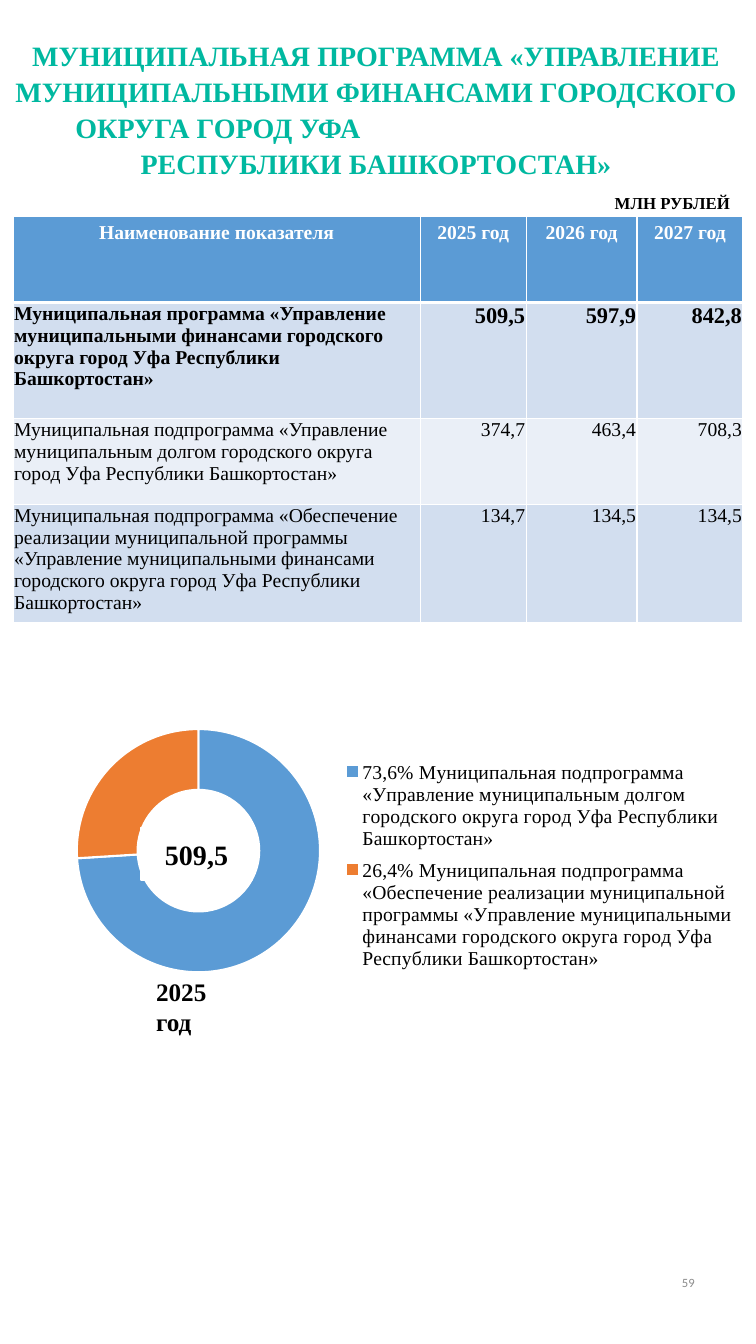
"""Build the slide on the city finance management programme."""
from dataclasses import dataclass

from lxml import etree
from pptx import Presentation
from pptx import util as u
from pptx.chart import data as chart_data
from pptx.dml import color
from pptx.enum import chart as chart_kinds, shapes, text
from pptx.oxml import ns, parse_xml

PX = 9144
ALIGN = text.PP_ALIGN


@dataclass(frozen=True)
class Theme:
    serif: str = "Times New Roman"
    sans: str = "Calibri"
    title: str = "00B8A0"
    ink: str = "000000"
    paper: str = "FFFFFF"
    muted: str = "8C8C8C"
    blue: str = "5B9BD5"
    orange: str = "ED7D31"
    band_dark: str = "D2DEEF"
    band_light: str = "EAEFF7"
    title_size: int = 20
    year_size: int = 18
    total_size: int = 16
    body_size: int = 14
    unit_size: int = 12
    chart_size: int = 10
    page_size: int = 9


THEME = Theme()
YEARS = ["2025 год", "2026 год", "2027 год"]
DEBT = ("Муниципальная подпрограмма «Управление муниципальным долгом "
        "городского округа город Уфа Республики Башкортостан»")
SUPPORT = ("Муниципальная подпрограмма «Обеспечение реализации муниципальной "
           "программы «Управление муниципальными финансами городского округа "
           "город Уфа Республики Башкортостан»")
ROWS = [
    ["Наименование показателя", *YEARS],
    ["Муниципальная программа «Управление муниципальными финансами городского "
     "округа город Уфа Республики Башкортостан»", "509,5", "597,9", "842,8"],
    [DEBT, "374,7", "463,4", "708,3"],
    [SUPPORT, "134,7", "134,5", "134,5"],
]
TITLE = [
    ("МУНИЦИПАЛЬНАЯ ПРОГРАММА «УПРАВЛЕНИЕ МУНИЦИПАЛЬНЫМИ ФИНАНСАМИ ГОРОДСКОГО",
     ALIGN.CENTER, 0),
    ("ОКРУГА ГОРОД УФА", ALIGN.LEFT, 67),
    ("РЕСПУБЛИКИ БАШКОРТОСТАН»", ALIGN.CENTER, 0),
]


def px(*lengths):
    """Turn px lengths into EMU."""
    return [u.Emu(length * PX) for length in lengths]


def rgb(value):
    """Return a colour object for a hex value."""
    return color.RGBColor.from_string(value)


def style_font(font, size, tint=THEME.ink, bold=False, name=THEME.serif):
    """Set face, size, colour and weight of a font."""
    font.name, font.size, font.bold = name, u.Pt(size), bold
    font.color.rgb = rgb(tint)


def add_span(para, words, align, size, **look):
    """Align a paragraph and add one styled run to it."""
    para.alignment = align
    span = para.add_run()
    span.text = words
    style_font(span.font, size, **look)


def add_box(page, place, anchor=text.MSO_ANCHOR.TOP, wrap=True):
    """Add an empty text box and return its frame."""
    frame = page.shapes.add_textbox(*px(*place)).text_frame
    frame.word_wrap, frame.vertical_anchor = wrap, anchor
    return frame


def add_label(page, place, words, size, align=ALIGN.LEFT,
              anchor=text.MSO_ANCHOR.TOP, wrap=True, **look):
    """Add a text box with one line of text."""
    frame = add_box(page, place, anchor, wrap)
    add_span(frame.paragraphs[0], words, align, size, **look)


def add_title(page):
    """Add the heading with its shifted third line."""
    frame = add_box(page, (-2, 30, 750, 154), text.MSO_ANCHOR.MIDDLE)
    for index, (words, align, indent) in enumerate(TITLE):
        para = frame.add_paragraph() if index else frame.paragraphs[0]
        para.line_spacing = 1.07
        para.space_after = u.Pt(0)
        if indent:
            para._p.get_or_add_pPr().set("marL", str(indent * PX))
        add_span(para, words, align, THEME.title_size, tint=THEME.title, bold=True)
    para.space_after = u.Pt(8)


def add_borders(cell, row):
    """Draw white cell borders, thicker under the header row."""
    thick = {(0, "B"), (1, "T")}
    for side in "LRTB":
        width = u.Pt(3 if (row, side) in thick else 1)
        cell._tc.get_or_add_tcPr().append(parse_xml(
            f'<a:ln{side} {ns.nsdecls("a")} w="{width}"><a:solidFill>'
            f'<a:srgbClr val="{THEME.paper}"/></a:solidFill></a:ln{side}>'))


def fill_cell(cell, row, column, words):
    """Write and style one table cell."""
    add_borders(cell, row)
    cell.fill.solid()
    fills = [THEME.blue, THEME.band_dark, THEME.band_light, THEME.band_dark]
    cell.fill.fore_color.rgb = rgb(fills[row])
    if row:
        cell.margin_left, cell.margin_right, cell.margin_top, cell.margin_bottom = px(1, 1, 1, 0)
    align = ALIGN.CENTER if row == 0 else ALIGN.RIGHT if column else ALIGN.LEFT
    size = THEME.total_size if row == 1 and column else THEME.body_size
    add_span(cell.text_frame.paragraphs[0], words, align, size,
             tint=THEME.ink if row else THEME.paper, bold=row < 2)


def add_budget_table(page):
    """Add the table of spending by year."""
    table = page.shapes.add_table(4, 4, *px(13, 215, 724, 353)).table
    for column, width in zip(table.columns, px(404, 105, 110, 105)):
        column.width = width
    for row, height in zip(table.rows, px(85, 115, 85, 68)):
        row.height = height
    for row, values in enumerate(ROWS):
        for column, words in enumerate(values):
            fill_cell(table.cell(row, column), row, column, words)


def place_part(parent, before, target, **bounds):
    """Give a chart part a manual layout ahead of a sibling tag."""
    for old in parent.findall(ns.qn("c:layout")):
        parent.remove(old)
    layout = etree.Element(ns.qn("c:layout"))
    manual = etree.SubElement(layout, ns.qn("c:manualLayout"))
    values = {"layoutTarget": target, "xMode": "edge", "yMode": "edge", **bounds}
    for tag, value in values.items():
        if value is not None:
            etree.SubElement(manual, ns.qn(f"c:{tag}")).set("val", str(value))
    parent.find(ns.qn(before)).addprevious(layout)


def add_share_chart(page):
    """Add the doughnut of subprogramme shares."""
    data = chart_data.CategoryChartData()
    data.categories = [f"73,6% {DEBT}", f"26,4% {SUPPORT}"]
    data.add_series("Series 1", (74, 26))
    chart = page.shapes.add_chart(chart_kinds.XL_CHART_TYPE.DOUGHNUT,
                                  *px(0, 659, 743, 377), data).chart
    chart.has_title = False
    style_font(chart.font, THEME.chart_size, name=THEME.sans)
    chart.has_legend = True
    chart.legend.position = chart_kinds.XL_LEGEND_POSITION.RIGHT
    chart.legend.include_in_layout = False
    style_font(chart.legend.font, THEME.body_size)
    plot = chart.plots[0]
    plot.vary_by_categories = True
    for index, tint in enumerate((THEME.blue, THEME.orange)):
        look = plot.series[0].points[index].format
        look.fill.solid()
        look.fill.fore_color.rgb = rgb(tint)
        look.line.color.rgb = rgb(THEME.paper)
        look.line.width = u.Pt(1.5)
    ring = plot._element
    ring.find(ns.qn("c:holeSize")).set("val", "75")
    place_part(ring.getparent(), "c:doughnutChart", "inner", x=0.1, y=0.17, w=0.33, h=0.64)
    place_part(chart.legend._element, "c:overlay", None, x=0.45, y=0.23, w=0.54, h=0.6)


def add_total(page):
    """Add the total in the middle of the doughnut."""
    box = page.shapes.add_shape(shapes.MSO_SHAPE.RECTANGLE, *px(140, 821, 110, 52))
    box.shadow.inherit = False
    box.fill.solid()
    box.fill.fore_color.rgb = box.line.color.rgb = rgb(THEME.paper)
    box.line.width = u.Pt(1)
    box.text_frame.vertical_anchor = text.MSO_ANCHOR.MIDDLE
    add_span(box.text_frame.paragraphs[0], ROWS[1][1], ALIGN.CENTER,
             THEME.title_size, bold=True)


def main():
    """Build and save the deck."""
    deck = Presentation()
    deck.slide_width, deck.slide_height = px(750, 1333)
    page = deck.slides.add_slide(deck.slide_layouts[6])
    add_title(page)
    add_share_chart(page)
    add_total(page)
    add_budget_table(page)
    add_label(page, (145, 963, 100, 45), YEARS[0], THEME.year_size, wrap=False, bold=True)
    add_label(page, (600, 186, 150, 30), "МЛН РУБЛЕЙ", THEME.unit_size, bold=True)
    add_label(page, (530, 1236, 169, 71), "59", THEME.page_size, ALIGN.RIGHT,
              text.MSO_ANCHOR.MIDDLE, tint=THEME.muted, name=THEME.sans)
    deck.save("out.pptx")


if __name__ == "__main__":
    main()
